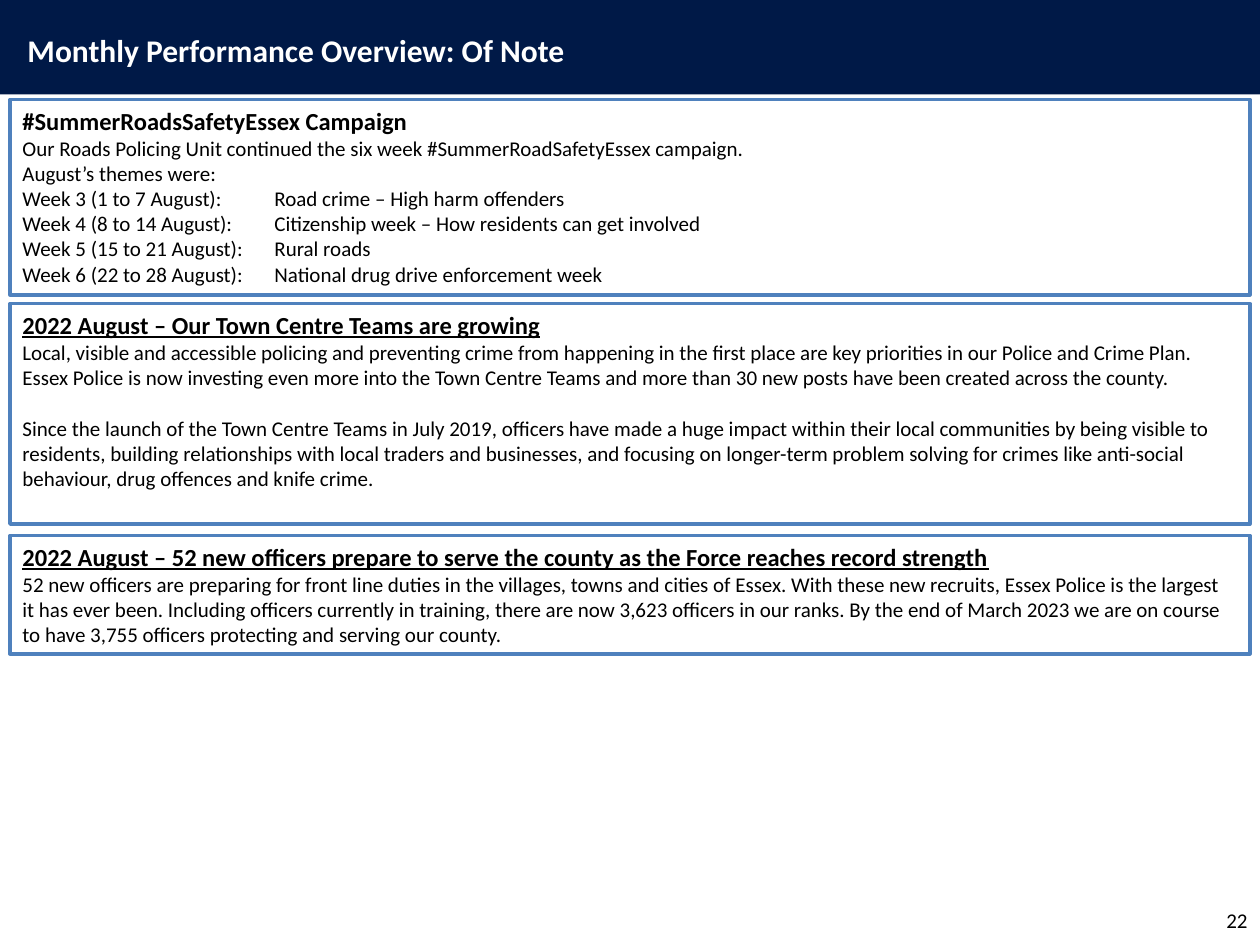
from pptx import Presentation
from pptx.dml.color import RGBColor
from pptx.enum.shapes import MSO_SHAPE as SHAPE
from pptx.enum.text import MSO_ANCHOR as ANCHOR, PP_ALIGN as ALIGN
from pptx.util import Inches, Pt

WIDTH, HEIGHT = 10, 7.5
MARGIN = 0.08
NAVY, BLUE, WHITE, BLACK = "001947", "4F81BD", "FFFFFF", "000000"

PANELS = [
    (0.79, 1.55, False, "#SummerRoadsSafetyEssex Campaign", 0, [
        "Our Roads Policing Unit continued the six week #SummerRoadSafetyEssex campaign.",
        "August’s themes were:",
        "Week 3 (1 to 7 August): \tRoad crime – High harm offenders",
        "Week 4 (8 to 14 August):\tCitizenship week – How residents can get involved",
        "Week 5 (15 to 21 August):\tRural roads",
        "Week 6 (22 to 28 August):\tNational drug drive enforcement week",
    ]),
    (2.41, 1.75, True, "2022 August – Our Town Centre Teams are growing", 14.5, [
        "Local, visible and accessible policing and preventing crime from happening in the "
        "first place are key priorities in our Police and Crime Plan. Essex Police is now "
        "investing even more into the Town Centre Teams and more than 30 new posts have been "
        "created across the county.",
        "Since the launch of the Town Centre Teams in July 2019, officers have made a huge "
        "impact within their local communities by being visible to residents, building "
        "relationships with local traders and businesses, and focusing on longer-term problem "
        "solving for crimes like anti-social behaviour, drug offences and knife crime.",
    ]),
    (4.25, 0.94, True, "2022 August – 52 new officers prepare to serve the county as the "
     "Force reaches record strength", 0, [
        "52 new officers are preparing for front line duties in the villages, towns and cities "
        "of Essex. With these new recruits, Essex Police is the largest it has ever been. "
        "Including officers currently in training, there are now 3,623 officers in our ranks. "
        "By the end of March 2023 we are on course to have 3,755 officers protecting and "
        "serving our county.",
    ]),
]


def color(value):
    return RGBColor.from_string(value)


def inches(box):
    return [Inches(v) for v in box]


def write(p, text, size, fill=BLACK, bold=False, underline=False, align=ALIGN.LEFT):
    p.text = text
    p.alignment = align
    font = p.font
    font.name, font.size = "Calibri", Pt(size)
    font.bold, font.underline = bold, underline
    font.color.rgb = color(fill)


def add_box(s, box, fill, line=None):
    sp = s.shapes.add_shape(SHAPE.RECTANGLE, *inches(box))
    sp.shadow.inherit = False
    sp.fill.solid()
    sp.fill.fore_color.rgb = color(fill)
    if line:
        sp.line.color.rgb = color(line)
        sp.line.width = Pt(2)
    else:
        sp.line.fill.background()
    return sp


def add_label(s, box, text, size, anchor=ANCHOR.TOP, **style):
    tf = s.shapes.add_textbox(*inches(box)).text_frame
    tf.word_wrap = True
    tf.vertical_anchor = anchor
    write(tf.paragraphs[0], text, size, **style)


def add_header(s, box):
    left, top, width, height = box
    add_box(s, box, NAVY)
    add_label(s, (left + 0.12, top + 0.2, width * 0.6, height - 0.35),
              "Monthly Performance Overview: Of Note", 18, fill=WHITE, bold=True)


def add_panel(s, box, heading, underline, gap, paragraphs):
    tf = add_box(s, box, WHITE, BLUE).text_frame
    tf.word_wrap = True
    tf.vertical_anchor = ANCHOR.TOP
    write(tf.paragraphs[0], heading, 14, bold=True, underline=underline)
    for i, text in enumerate(paragraphs):
        p = tf.add_paragraph()
        write(p, text, 12)
        p.space_before = Pt(gap if i else 0)


def main():
    prs = Presentation()
    prs.slide_width, prs.slide_height = Inches(WIDTH), Inches(HEIGHT)
    s = prs.slides.add_slide(prs.slide_layouts[6])
    add_header(s, (0, 0, WIDTH, HEIGHT / 10))
    for top, height, underline, heading, gap, paragraphs in PANELS:
        add_panel(s, (MARGIN, top, WIDTH - 2 * MARGIN, height),
                  heading, underline, gap, paragraphs)
    add_label(s, (7.67, HEIGHT - 0.4, 2.33, 0.4), "22", 12,
              anchor=ANCHOR.MIDDLE, align=ALIGN.RIGHT)
    prs.save("out.pptx")


if __name__ == "__main__":
    main()
